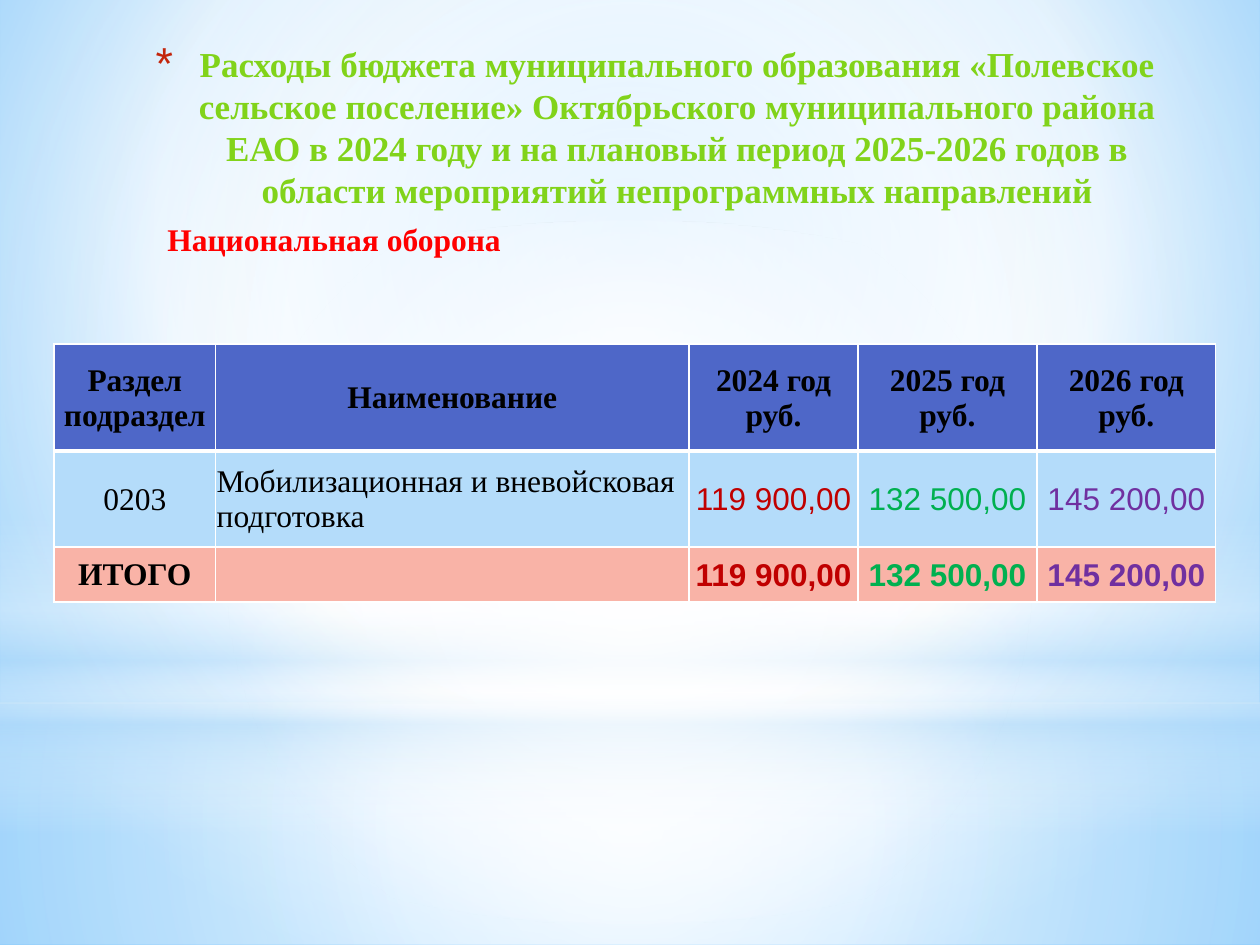
from lxml.etree import SubElement
from pptx import Presentation
from pptx.dml.color import RGBColor
from pptx.enum.shapes import MSO_SHAPE
from pptx.enum.text import MSO_ANCHOR, PP_ALIGN
from pptx.oxml.ns import qn
from pptx.util import Inches, Pt

SERIF, SANS = "Times New Roman", "Arial"
WHITE, SKY, BLACK = "FFFFFF", "B4DCFA", "000000"
YEAR_COLORS = ["C00000", "00B050", "7030A0"]
DECK_WIDTH, DECK_HEIGHT = Inches(10), Inches(7.5)
UNIT = DECK_WIDTH / 10
CENTER = (50, 50, 50, 50)


def units(*counts):
    return [round(count * UNIT) for count in counts]


def color(code):
    return RGBColor.from_string(code)


def child(parent, tag, **attributes):
    return SubElement(parent, qn(tag), {key: str(value) for key, value in attributes.items()})


def style(para, size, font, code, bold):
    for span in para.runs:
        span.font.size = Pt(size)
        span.font.name = font
        span.font.bold = bold
        span.font.color.rgb = color(code)


def paint_gradient(owner, fill, stops, focus=None):
    fill.solid()
    fill.fore_color.rgb = color(WHITE)
    solid = owner.xpath(".//a:solidFill")[0]
    gradient = child(solid.getparent(), "a:gradFill", rotWithShape=1)
    stop_list = child(gradient, "a:gsLst")
    for position, code, opacity in stops:
        stop = child(stop_list, "a:gs", pos=position * 1000)
        tint = child(stop, "a:srgbClr", val=code)
        if opacity < 100:
            child(tint, "a:alpha", val=opacity * 1000)
    if focus:
        sides = {side: share * 1000 for side, share in zip("ltrb", focus)}
        child(child(gradient, "a:path", path="circle"), "a:fillToRect", **sides)
    else:
        child(gradient, "a:lin", ang=90 * 60000, scaled=0)
    solid.getparent().replace(solid, gradient)


def add_glow(page, box, stops, focus=CENTER, kind=MSO_SHAPE.RECTANGLE):
    glow = page.shapes.add_shape(kind, *units(*box))
    glow.shadow.inherit = False
    glow.line.fill.background()
    paint_gradient(glow.element, glow.fill, stops, focus)


def add_backdrop(page):
    paint_gradient(page.element, page.background.fill,
                   [(0, "9ED5FF", 100), (60, WHITE, 100), (100, "5BB9FF", 100)],
                   (20, 10, 20, 60))
    add_glow(page, (0, 5.58, 10, 1.92), [(0, WHITE, 91), (37, WHITE, 76), (100, SKY, 79)])
    add_glow(page, (0, 0, 10, 5.58), [(0, WHITE, 89), (48, WHITE, 62), (100, SKY, 79)])
    add_glow(page, (0, 4.12, 10, 2.5),
             [(0, WHITE, 0), (29, WHITE, 30), (45, SKY, 40),
              (55, WHITE, 26), (65, SKY, 60), (100, WHITE, 0)], None)
    add_glow(page, (0, 1.75, 10, 5.58), [(0, WHITE, 100), (56, WHITE, 0)],
             kind=MSO_SHAPE.OVAL)


def add_title(page, box, text):
    title = page.shapes.title
    page.shapes.element.append(title.element)
    title.left, title.top, title.width, title.height = units(*box)
    frame = title.text_frame
    frame.text = text
    frame.word_wrap = True
    frame.vertical_anchor = MSO_ANCHOR.TOP
    para = frame.paragraphs[0]
    para.alignment = PP_ALIGN.CENTER
    style(para, 20, SERIF, "81D31A", True)
    indent = units(0.35)[0]
    properties = para._p.get_or_add_pPr()
    properties.set("marL", str(indent))
    properties.set("indent", str(-indent))
    child(child(properties, "a:buClr"), "a:srgbClr", val="C3260C")
    child(properties, "a:buSzPct", val=128000)
    child(properties, "a:buFont", typeface=SANS)
    child(properties, "a:buChar", char="*")


def add_section_name(page, box, text):
    frame = page.shapes.add_textbox(*units(*box)).text_frame
    frame.word_wrap = True
    frame.text = text
    para = frame.paragraphs[0]
    para.space_before, para.space_after = Pt(3.6), Pt(3)
    para._p.get_or_add_pPr().set("marL", str(units(0.09)[0]))
    style(para, 18, SERIF, "FF0000", True)


def set_borders(cell, bottom_width):
    properties = cell._tc.get_or_add_tcPr()
    for place, (side, width) in enumerate(
            zip(("lnL", "lnR", "lnT", "lnB"), (1, 1, 1, bottom_width))):
        line = child(properties, "a:" + side, w=Pt(width))
        child(child(line, "a:solidFill"), "a:srgbClr", val=WHITE)
        properties.insert(place, line)


def fill_cell(cell, text, fill, font, code, bold, alignment, bottom_width):
    cell.text = text
    cell.vertical_anchor = MSO_ANCHOR.MIDDLE
    cell.margin_left, cell.margin_right, cell.margin_top, cell.margin_bottom = units(
        0.01, 0.01, 0.01, 0)
    cell.fill.solid()
    cell.fill.fore_color.rgb = color(fill)
    for para in cell.text_frame.paragraphs:
        para.alignment = alignment
        style(para, 18, font, code, bold)
    set_borders(cell, bottom_width)


def add_expenses(page, box, columns, rows):
    amounts = ["119 900,00", "132 500,00", "145 200,00"]
    lines = [
        (["Раздел подраздел", "Наименование", "2024 год\nруб.", "2025 год руб.",
          "2026 год руб."], "4E67C8", True),
        (["0203", "Мобилизационная и вневойсковая подготовка", *amounts], SKY, False),
        (["ИТОГО", "", *amounts], "F9B3A7", True),
    ]
    table = page.shapes.add_table(len(rows), len(columns), *units(*box)).table
    for column, width in zip(table.columns, units(*columns)):
        column.width = width
    for row, height in zip(table.rows, units(*rows)):
        row.height = height
    for r, (texts, fill, bold) in enumerate(lines):
        for c, text in enumerate(texts):
            is_amount = r > 0 and c > 1
            font, code = (SANS, YEAR_COLORS[c - 2]) if is_amount else (SERIF, BLACK)
            alignment = PP_ALIGN.LEFT if r == 1 and c == 1 else PP_ALIGN.CENTER
            fill_cell(table.cell(r, c), text, fill, font, code, bold, alignment,
                      3 if r == 0 else 1)


def main():
    deck = Presentation()
    deck.slide_width, deck.slide_height = DECK_WIDTH, DECK_HEIGHT
    page = deck.slides.add_slide(deck.slide_layouts[5])
    add_backdrop(page)
    add_title(page, (0.83, 0.29, 8.74, 1.42),
              "Расходы бюджета муниципального образования «Полевское сельское поселение» "
              "Октябрьского муниципального района ЕАО в 2024 году и на плановый период "
              "2025-2026 годов в области мероприятий непрограммных направлений")
    add_section_name(page, (1.14, 1.7, 3.54, 0.4), "Национальная оборона")
    add_expenses(page, (0.43, 2.73, 9.21, 2.05),
                 [1.28, 3.76, 1.34, 1.42, 1.42], [0.85, 0.76, 0.44])
    deck.save("out.pptx")


if __name__ == "__main__":
    main()
